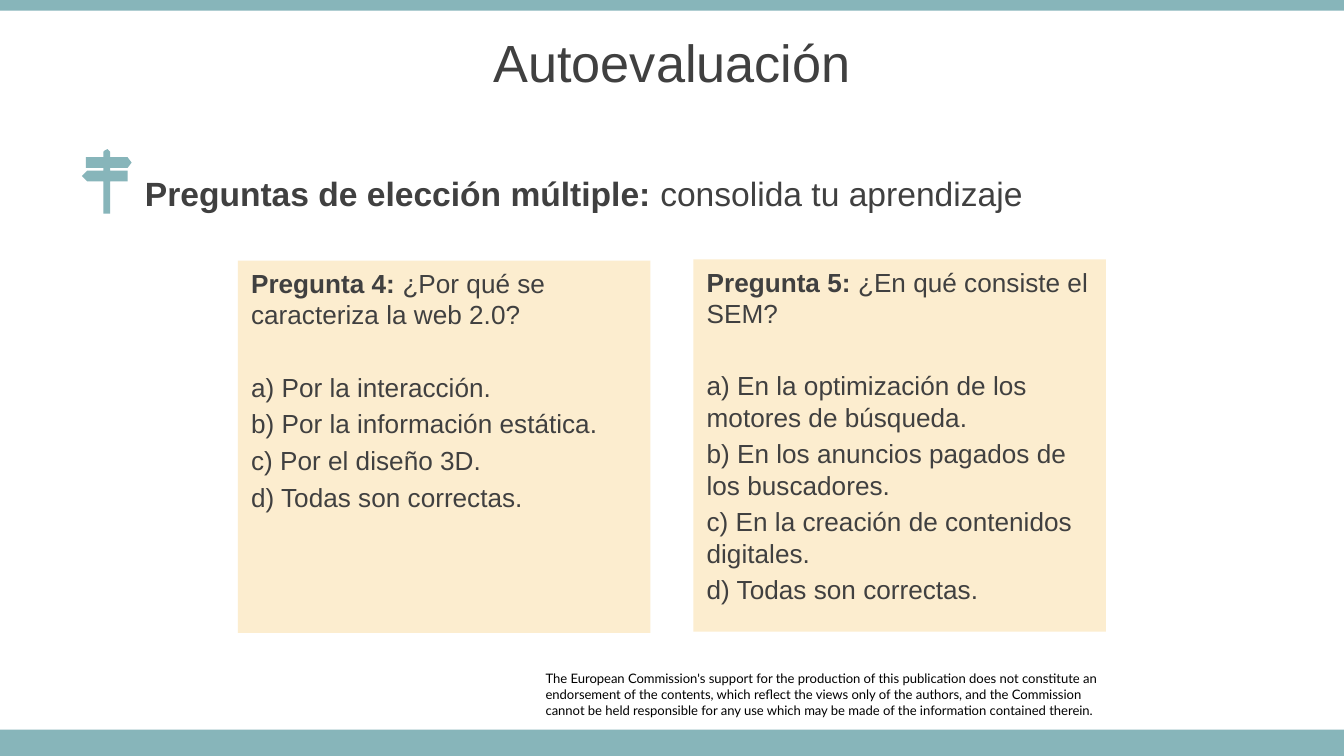
"""Build a self-assessment slide with two multiple-choice questions."""
from pptx import Presentation
from pptx.dml.color import RGBColor
from pptx.enum.shapes import MSO_SHAPE
from pptx.enum.text import MSO_ANCHOR, PP_ALIGN
from pptx.util import Inches, Pt

RECT = MSO_SHAPE.RECTANGLE
TOP, MIDDLE = MSO_ANCHOR.TOP, MSO_ANCHOR.MIDDLE
LEFT, CENTER = PP_ALIGN.LEFT, PP_ALIGN.CENTER
TEAL = RGBColor(0x87, 0xB5, 0xBA)
CREAM = RGBColor(0xFC, 0xED, 0xCF)
GRAY = RGBColor(0x40, 0x40, 0x40)
BLACK = RGBColor(0, 0, 0)

SIGN = [
    (0.8, 1.11), (0.81, 1.12), (0.82, 1.13), (0.82, 1.17), (0.95, 1.17),
    (0.98, 1.21), (0.95, 1.25), (0.82, 1.25), (0.82, 1.27), (0.95, 1.27),
    (0.95, 1.35), (0.82, 1.35), (0.82, 1.59), (0.77, 1.59), (0.77, 1.35),
    (0.65, 1.35), (0.61, 1.31), (0.65, 1.27), (0.77, 1.27), (0.77, 1.25),
    (0.64, 1.25), (0.64, 1.17), (0.77, 1.17), (0.77, 1.13), (0.78, 1.12),
]
CARDS = [
    (1.77, 1.94, "Pregunta 4: ", "¿Por qué se caracteriza la web 2.0?", [
        "a) Por la interacción.",
        "b) Por la información estática.",
        "c) Por el diseño 3D.",
        "d) Todas son correctas.",
    ]),
    (5.16, 1.93, "Pregunta 5: ", "¿En qué consiste el SEM?", [
        "a) En la optimización de los motores de búsqueda.",
        "b) En los anuncios pagados de los buscadores.",
        "c) En la creación de contenidos digitales.",
        "d) Todas son correctas.",
    ]),
]
NOTICE = [
    "The European Commission's support for the production of this publication "
    "does not constitute an endorsement of the contents, which reflect the "
    "views only of the authors, and the Commission",
    "cannot be held responsible for any use which may be made of the "
    "information contained therein.",
]


def paint(shape, color):
    """Give a shape a flat fill with no line or shadow."""
    shape.shadow.inherit = False
    shape.fill.solid()
    shape.fill.fore_color.rgb = color
    shape.line.fill.background()


def add_rect(slide, x, y, w, h, color):
    """Add a flat rectangle."""
    rect = slide.shapes.add_shape(RECT, Inches(x), Inches(y), Inches(w), Inches(h))
    paint(rect, color)
    return rect


def add_box(slide, x, y, w, h):
    """Add a text box and return its frame."""
    box = slide.shapes.add_textbox(Inches(x), Inches(y), Inches(w), Inches(h))
    return box.text_frame


def add_sign(slide):
    """Draw the signpost icon."""
    start, *rest = [(Inches(x), Inches(y)) for x, y in SIGN]
    pen = slide.shapes.build_freeform(*start)
    pen.add_line_segments(rest, close=True)
    paint(pen.convert_to_shape(), TEAL)


def write(frame, lines, size, color=GRAY, font="Arial", align=LEFT, anchor=TOP):
    """Fill a frame with one paragraph per line."""
    frame.word_wrap = True
    frame.vertical_anchor = anchor
    frame.text = "\n".join(lines)
    for para in frame.paragraphs:
        para.alignment = align
        for run in para.runs:
            style(run, size, color, font)


def style(run, size, color=GRAY, font="Arial"):
    """Set the font of a run."""
    run.font.name = font
    run.font.size = Pt(size)
    run.font.color.rgb = color


def add_lead(frame, tail, size):
    """Make the first run bold and follow it with plain text."""
    para = frame.paragraphs[0]
    para.runs[0].font.bold = True
    run = para.add_run()
    run.text = tail
    style(run, size)


def add_card(slide, x, y, label, query, picks):
    """Add a question card with its answers."""
    frame = add_rect(slide, x, y, 3.07, 2.77, CREAM).text_frame
    write(frame, [label, *picks], 14)
    add_lead(frame, query, 14)
    for para in frame.paragraphs[1:]:
        para.space_before = Pt(2.8)
    frame.paragraphs[1].space_before = Pt(22)


def add_notice(slide):
    """Add the funding notice without insets."""
    frame = add_box(slide, 4.06, 4.99, 4.17, 0.35)
    frame.margin_left = frame.margin_right = 0
    frame.margin_top = frame.margin_bottom = 0
    write(frame, NOTICE, 7, BLACK, "Lato")


def main():
    """Build and save the slide."""
    deck = Presentation()
    deck.slide_width = Inches(10)
    deck.slide_height = Inches(10 * 9 / 16)
    slide = deck.slides.add_slide(deck.slide_layouts[6])
    add_notice(slide)
    add_rect(slide, 0, 5.43, 10, 0.2, TEAL)
    add_rect(slide, 0, 0, 10, 0.08, TEAL)
    title = add_box(slide, 0, 0.14, 10, 0.63)
    write(title, ["Autoevaluación"], 28, align=CENTER, anchor=MIDDLE)
    lead = add_box(slide, 0.98, 1.28, 7.48, 0.31)
    write(lead, ["Preguntas de elección múltiple: "], 18, anchor=MIDDLE)
    add_lead(lead, "consolida tu aprendizaje", 18)
    add_sign(slide)
    for card in CARDS:
        add_card(slide, *card)
    deck.save("out.pptx")


if __name__ == "__main__":
    main()
